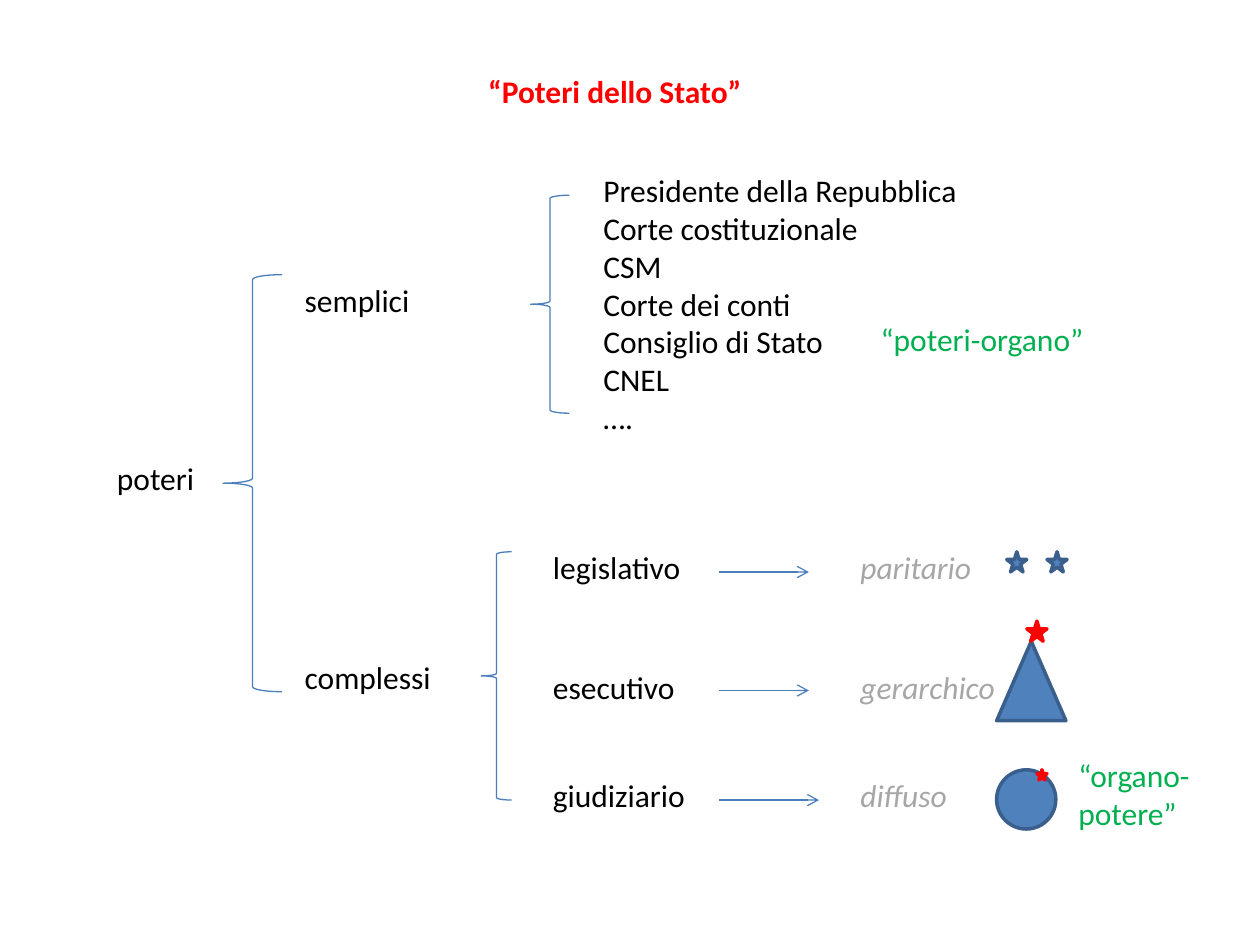
"""Builds a slide with a bracket diagram of the powers of the State."""
from lxml import etree
from pptx import Presentation
from pptx.dml.color import RGBColor
from pptx.enum.shapes import MSO_CONNECTOR, MSO_SHAPE
from pptx.enum.text import MSO_AUTO_SIZE, PP_ALIGN
from pptx.oxml.ns import qn
from pptx.util import Inches, Pt

BRACE, STAR = MSO_SHAPE.LEFT_BRACE, MSO_SHAPE.STAR_5_POINT
TRIANGLE, CIRCLE = MSO_SHAPE.ISOSCELES_TRIANGLE, MSO_SHAPE.OVAL
STRAIGHT = MSO_CONNECTOR.STRAIGHT
LEFT, CENTER = PP_ALIGN.LEFT, PP_ALIGN.CENTER
FIT = MSO_AUTO_SIZE.SHAPE_TO_FIT_TEXT

FONT, SIZE = "Calibri", 18
COLORS = {"text": "000000", "red": "FF0000", "green": "00B050", "gray": "A6A6A6",
          "blue": "4F81BD", "edge": "3A5F8C", "thin": "4B7EBC"}

COLUMNS = {"root": 0.83, "kind": 2.32, "power": 4.29, "organ": 4.69,
           "arrow": 5.71, "order": 6.73, "symbol": 7.91}
ROWS = {"title": 0.52, "organs": 1.31, "simple": 2.18, "root": 3.59, "complex": 5.17}
LINE_HEIGHT = 0.4

ORGANS = ["Presidente della Repubblica", "Corte costituzionale", "CSM", "Corte dei conti",
          "Consiglio di Stato", "CNEL", "…."]
LABELS = [
    (["poteri"], COLUMNS["root"], ROWS["root"], 0.94, LINE_HEIGHT, "text"),
    (["semplici"], COLUMNS["kind"], ROWS["simple"], 1.57, LINE_HEIGHT, "text"),
    (["complessi"], COLUMNS["kind"], ROWS["complex"], 1.34, LINE_HEIGHT, "text"),
    (ORGANS, COLUMNS["organ"], ROWS["organs"], 3.46, 2.22, "text"),
    (["“poteri-organo”"], 6.89, 2.49, 1.89, LINE_HEIGHT, "green"),
    (["“organo-potere”"], 8.46, 5.95, 1.1, 0.71, "green"),
]
BRANCHES = [
    ("legislativo", "paritario", 4.3, 4.54, 0.71),
    ("esecutivo", "gerarchico", 5.25, 5.48, 0.71),
    ("giudiziario", "diffuso", 6.11, 6.35, 0.79),
]
BRACES = [(1.77, 2.18, 0.47, 3.31), (3.82, 4.38, 0.24, 1.97), (4.21, 1.55, 0.31, 1.73)]
SYMBOLS = [
    (TRIANGLE, COLUMNS["symbol"], 5.09, 0.55, 0.63, "blue", "edge"),
    (CIRCLE, COLUMNS["symbol"], 6.11, 0.47, 0.47, "blue", "edge"),
    (STAR, 8.15, 4.93, 0.16, 0.16, "red", "red"),
    (STAR, 8.23, 6.11, 0.08, 0.08, "red", "red"),
    (STAR, 7.99, 4.38, 0.16, 0.16, "blue", "edge"),
    (STAR, 8.31, 4.38, 0.16, 0.16, "blue", "edge"),
]


def color(name):
    return RGBColor.from_string(COLORS[name])


def add_label(slide, lines, left, top, width, height, ink,
              bold=False, italic=False, align=LEFT):
    label = slide.shapes.add_textbox(*map(Inches, (left, top, width, height)))
    frame = label.text_frame
    frame.word_wrap = True
    frame.auto_size = FIT
    for index, line in enumerate(lines):
        paragraph = frame.add_paragraph() if index else frame.paragraphs[0]
        paragraph.alignment = align
        run = paragraph.add_run()
        run.text = line
        run.font.name, run.font.size = FONT, Pt(SIZE)
        run.font.bold, run.font.italic = bold, italic
        run.font.color.rgb = color(ink)


def add_figure(slide, kind, left, top, width, height, fill, edge, weight=2):
    figure = slide.shapes.add_shape(kind, *map(Inches, (left, top, width, height)))
    figure.shadow.inherit = False
    if fill:
        figure.fill.solid()
        figure.fill.fore_color.rgb = color(fill)
    else:
        figure.fill.background()
    figure.line.color.rgb = color(edge)
    figure.line.width = Pt(weight)


def add_arrow(slide, left, y, length):
    arrow = slide.shapes.add_connector(STRAIGHT, *map(Inches, (left, y, left + length, y)))
    arrow.line.color.rgb = color("thin")
    arrow.line.width = Pt(0.75)
    properties = arrow.element.spPr
    etree.SubElement(properties.find(qn("a:ln")), qn("a:tailEnd"), type="arrow")
    etree.SubElement(properties, qn("a:effectLst"))


def main():
    deck = Presentation()
    deck.slide_width, deck.slide_height = Inches(10), Inches(7.5)
    slide = deck.slides.add_slide(deck.slide_layouts[6])

    add_label(slide, ["“Poteri dello Stato”"], 1.14, ROWS["title"], 7.48, LINE_HEIGHT,
              "red", bold=True, align=CENTER)
    for brace in BRACES:
        add_figure(slide, BRACE, *brace, None, "thin", 0.75)
    for label in LABELS:
        add_label(slide, *label)
    for power, order, top, arrow_y, length in BRANCHES:
        add_label(slide, [power], COLUMNS["power"], top, 1.57, LINE_HEIGHT, "text")
        add_arrow(slide, COLUMNS["arrow"], arrow_y, length)
        add_label(slide, [order], COLUMNS["order"], top, 1.65, LINE_HEIGHT, "gray", italic=True)
    for symbol in SYMBOLS:
        add_figure(slide, *symbol)

    deck.save("out.pptx")


if __name__ == "__main__":
    main()
